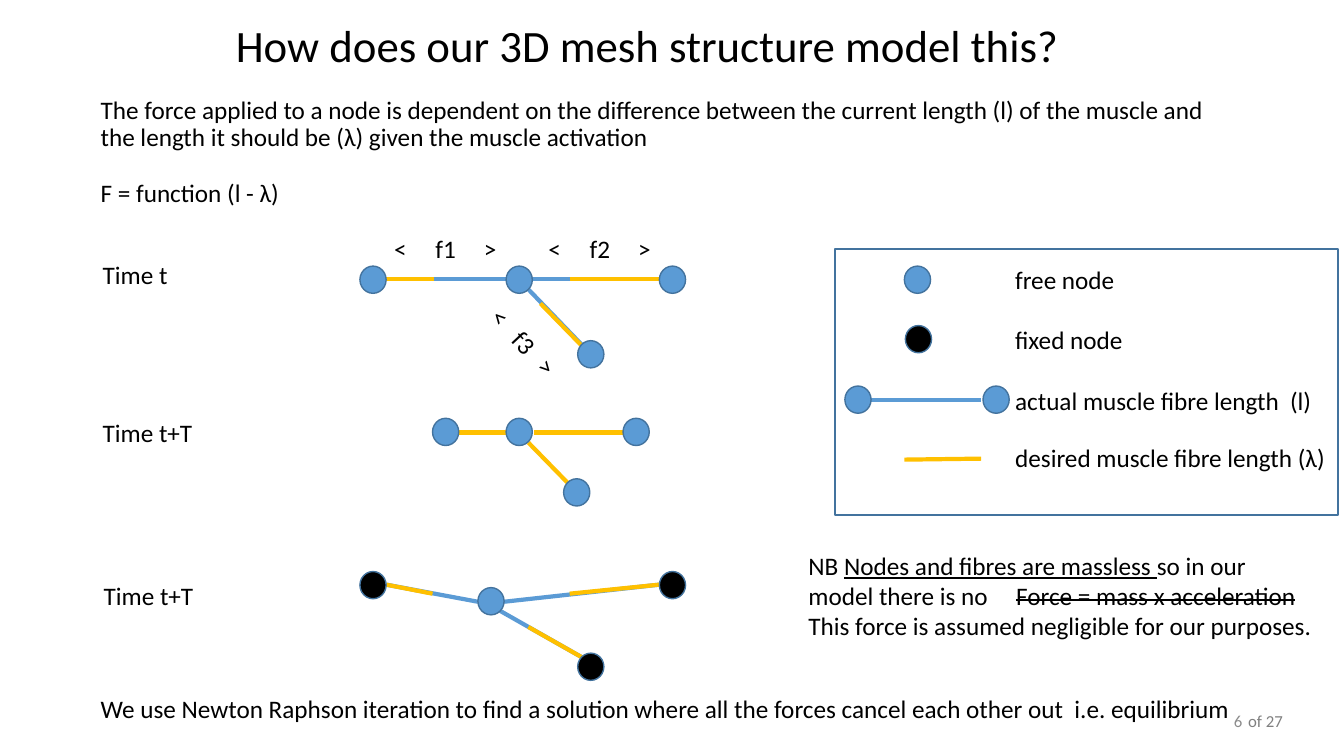
from lxml import etree
from pptx import Presentation
from pptx import util as u
from pptx.dml.color import RGBColor
from pptx.enum import shapes, text
from pptx.oxml.ns import qn

THEME = {
    "font": "Calibri",
    "black": "000000",
    "free": "5B9BD5",
    "fixed": "000000",
    "outline": "43739E",
    "actual": "5B9BD5",
    "desired": "FFC000",
    "of": "808080",
    "number": "8C8C8C",
    "title": 32,
    "body": 18,
    "small": 12,
}

SLIDE = (1333, 750)
NODE = (26, 27)
LEGEND_BOX = (828, 247, 499, 264)

FIBRES = {
    "actual": [
        (502, 277, 383, 277), (528, 277, 654, 277), (524, 287, 577, 342),
        (474, 597, 383, 580), (500, 597, 654, 580), (496, 606, 577, 652),
        (848, 397, 973, 397),
    ],
    "desired": [
        (383, 277, 430, 277), (565, 277, 654, 277), (536, 301, 576, 342),
        (455, 429, 502, 429), (530, 429, 618, 429), (524, 439, 563, 479),
        (383, 580, 429, 589), (565, 589, 654, 580), (524, 622, 577, 652),
        (897, 456, 973, 455),
    ],
}
NODES = {
    "free": [
        (357, 264), (502, 264), (654, 264), (573, 338),
        (429, 415), (502, 415), (618, 415), (559, 475),
        (474, 583), (897, 264), (838, 383), (975, 383),
    ],
    "fixed": [(357, 567), (654, 567), (573, 648), (898, 323)],
}

TITLE = "How does our 3D mesh structure model this?"
INTRO = [
    "The force applied to a node is dependent on the difference between the current "
    "length (l) of the muscle and the length it should be (λ) given the muscle activation",
    "F = function (l - λ)",
]
LABELS = [
    ("Time t", (92, 252, 85, 40)),
    ("Time t+T", (92, 409, 110, 40)),
    ("Time t+T", (93, 571, 110, 40)),
    ("free node", (997, 257, 120, 40)),
    ("fixed node", (997, 317, 128, 40)),
    ("actual muscle fibre length  (l)", (997, 377, 316, 40)),
    ("desired muscle fibre length (λ)", (997, 434, 331, 40)),
    ("We use Newton Raphson iteration to find a solution where all the forces "
     "cancel each other out  i.e. equilibrium", (90, 683, 1154, 40)),
]
FORCES = [
    ("<\tf1\t>", (381, 227, 124, 40), (41, 89), 0),
    ("<\tf2\t>", (534, 227, 124, 40), (41, 89), 0),
    ("<\tf3\t>", (470, 320, 101, 40), (30, 67), 46.9),
]
NOTE = [
    [("NB ", ""), ("Nodes and fibres are massless ", "underline"),
     ("so in our model there is no\t", ""), ("Force = mass x acceleration", "strike")],
    "This force is assumed negligible for our purposes.",
]


def px(n):
    return u.Emu(n * 9144)


def rgb(name):
    return RGBColor.from_string(THEME[name])


def add_text(s, content, box, size="body", color="black", wrap=False, tabs=(),
             rotation=0, align=None, middle=False, spacing=None, before=0, right=10):
    sp = s.shapes.add_textbox(*map(px, box))
    sp.rotation = rotation
    tf = sp.text_frame
    tf.word_wrap = wrap
    tf.margin_right = px(right)
    if middle:
        tf.vertical_anchor = text.MSO_ANCHOR.MIDDLE
    for i, para in enumerate([content] if isinstance(content, str) else content):
        p = tf.paragraphs[0] if i == 0 else tf.add_paragraph()
        if i and before:
            p.space_before = u.Pt(before)
        if spacing:
            p.line_spacing = spacing
        if align:
            p.alignment = align
        if tabs:
            stops = etree.SubElement(p._p.get_or_add_pPr(), qn("a:tabLst"))
            for stop in tabs:
                etree.SubElement(stops, qn("a:tab"), pos=str(px(stop)), algn="l")
        for words, style in [(para, "")] if isinstance(para, str) else para:
            r = p.add_run()
            r.text = words
            r.font.name = THEME["font"]
            r.font.size = u.Pt(THEME[size])
            r.font.color.rgb = rgb(color)
            if style == "underline":
                r.font.underline = True
            elif style == "strike":
                r._r.get_or_add_rPr().set("strike", "sngStrike")


def add_outlined(s, kind, box, fill=None):
    sp = s.shapes.add_shape(kind, *map(px, box))
    sp.shadow.inherit = False
    if fill:
        sp.fill.solid()
        sp.fill.fore_color.rgb = rgb(fill)
    else:
        sp.fill.background()
    sp.line.color.rgb = rgb("outline")
    sp.line.width = u.Pt(1)


def add_fibre(s, ends, color):
    line = s.shapes.add_connector(shapes.MSO_CONNECTOR.STRAIGHT, *map(px, ends))
    line.line.color.rgb = rgb(color)
    line.line.width = u.Pt(3)
    etree.SubElement(line._element.spPr, qn("a:effectLst"))


def main():
    prs = Presentation()
    prs.slide_width, prs.slide_height = map(px, SLIDE)
    s = prs.slides.add_slide(prs.slide_layouts[6])

    add_outlined(s, shapes.MSO_SHAPE.RECTANGLE, LEGEND_BOX)
    for kind, fibres in FIBRES.items():
        for ends in fibres:
            add_fibre(s, ends, kind)
    for kind, nodes in NODES.items():
        for corner in nodes:
            add_outlined(s, shapes.MSO_SHAPE.OVAL, corner + NODE, kind)

    add_text(s, TITLE, (224, 13, 845, 64), size="title")
    add_text(s, INTRO, (90, 79, 1150, 145), wrap=True, middle=True, spacing=0.9, before=20)
    for label, box in LABELS:
        add_text(s, label, box)
    for label, box, tabs, rotation in FORCES:
        add_text(s, label, box, wrap=True, tabs=tabs, rotation=rotation, right=0)
    add_text(s, NOTE, (792, 541, 520, 101), wrap=True, tabs=(206,))
    add_text(s, "6", (942, 695, 300, 40), size="small", color="number", wrap=True,
             align=text.PP_ALIGN.RIGHT, middle=True)
    add_text(s, "of 27", (1228, 700, 55, 30), size="small", color="of")
    prs.save("out.pptx")


if __name__ == "__main__":
    main()
